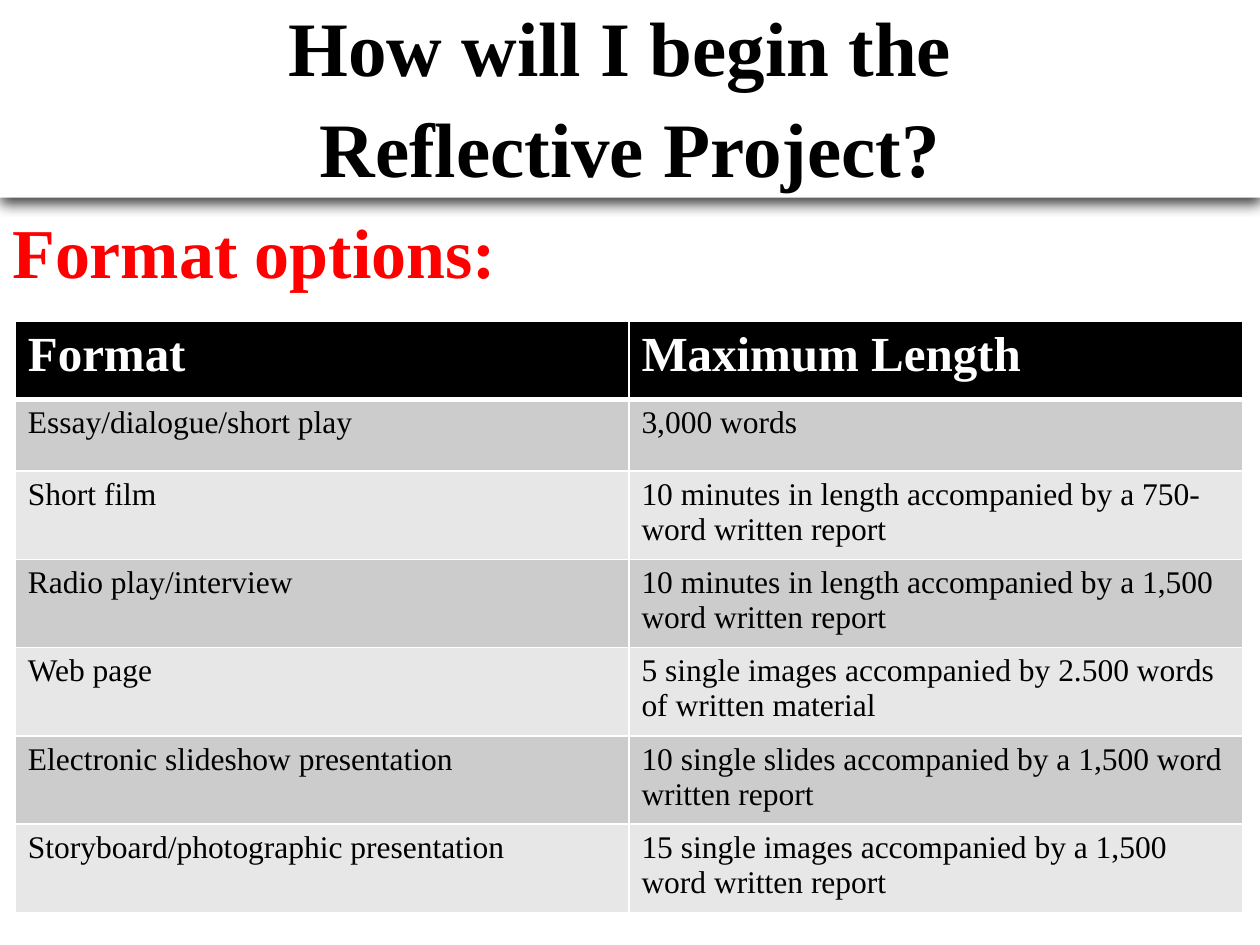
from copy import deepcopy

from lxml import etree
from pptx import Presentation
from pptx.dml.color import RGBColor
from pptx.enum.shapes import MSO_SHAPE
from pptx.enum.text import MSO_ANCHOR, PP_ALIGN
from pptx.oxml import parse_xml
from pptx.oxml.ns import nsdecls, qn
from pptx.util import Pt

RECTANGLE = MSO_SHAPE.RECTANGLE
MIDDLE, TOP = MSO_ANCHOR.MIDDLE, MSO_ANCHOR.TOP
CENTER, LEFT = PP_ALIGN.CENTER, PP_ALIGN.LEFT

# Content
TITLE = "How will I begin the \vReflective Project?"
SUBTITLE = "Format options:"
HEADER = ("Format", "Maximum Length")
FORMATS = [
    ("Essay/dialogue/short play", "3,000 words"),
    ("Short film", "10 minutes in length accompanied by a 750- word written report"),
    ("Radio play/interview", "10 minutes in length accompanied by a 1,500 word written report"),
    ("Web page", "5 single images accompanied by 2.500 words of written material"),
    ("Electronic slideshow presentation", "10 single slides accompanied by a 1,500 word written report"),
    ("Storyboard/photographic presentation", "15 single images accompanied by a 1,500 word written report"),
]

# Style
FONT = "Times New Roman"
COLORS = {
    "white": "FFFFFF",
    "black": "000000",
    "red": "FF0000",
    "dark band": "CCCCCC",
    "light band": "E7E7E7",
}
PAGE_WIDTH, PAGE_HEIGHT = 720, 540
COLUMN_WIDTH, HEADER_HEIGHT, ROW_HEIGHT = 350.6, 44.6, 41


def color(name):
    return RGBColor.from_string(COLORS[name])


def write(frame, text, size, ink="black", bold=False, align=LEFT, anchor=TOP, spacing=None):
    frame.word_wrap = True
    frame.vertical_anchor = anchor
    para = frame.paragraphs[0]
    para.text = text
    para.alignment = align
    para.line_spacing = spacing
    for span in para.runs:
        span.font.name = FONT
        span.font.size = Pt(size)
        span.font.bold = bold
        span.font.color.rgb = color(ink)
    # Line breaks take the format of the text around them
    for line_break in para._p.findall(qn("a:br")):
        line_break.append(deepcopy(para.runs[0]._r.rPr))


def add_shadow(shape, blur, distance, opacity):
    shape.shadow.inherit = False
    effects = shape._element.spPr.find(qn("a:effectLst"))
    effects.append(parse_xml(
        f'<a:outerShdw {nsdecls("a")} blurRad="{Pt(blur)}" dist="{Pt(distance)}" '
        f'dir="5400000" algn="t" rotWithShape="0"><a:srgbClr val="{COLORS["black"]}">'
        f'<a:alpha val="{opacity * 1000}"/></a:srgbClr></a:outerShdw>'))


def set_borders(cell, widths):
    properties = cell._tc.get_or_add_tcPr()
    for side, width in widths.items():
        line = etree.SubElement(properties, qn(f"a:ln{side}"), w=str(Pt(width)))
        fill = etree.SubElement(line, qn("a:solidFill"))
        etree.SubElement(fill, qn("a:srgbClr"), val=COLORS["white"])


deck = Presentation()
deck.slide_width, deck.slide_height = Pt(PAGE_WIDTH), Pt(PAGE_HEIGHT)
page = deck.slides.add_slide(deck.slide_layouts[5])

# Title on a white bar with a shadow
title = page.shapes.title
title.left, title.top, title.width, title.height = Pt(0), Pt(-8), Pt(PAGE_WIDTH), Pt(121)
write(title.text_frame, TITLE, 44, bold=True, align=CENTER, anchor=MIDDLE, spacing=1.09)

bar = page.shapes.add_shape(RECTANGLE, Pt(0), Pt(0), Pt(PAGE_WIDTH), Pt(113))
bar.fill.solid()
bar.fill.fore_color.rgb = color("white")
bar.line.fill.background()
add_shadow(bar, blur=8, distance=3, opacity=75)
title._element.addprevious(bar._element)

# Subtitle
box = page.shapes.add_textbox(Pt(0), Pt(111), Pt(PAGE_WIDTH), Pt(419))
write(box.text_frame, SUBTITLE, 40, ink="red", bold=True, spacing=1.1)

# Table of formats
rows = [HEADER, *FORMATS]
table = page.shapes.add_table(
    len(rows), len(HEADER), Pt(8.8), Pt(183.6), Pt(COLUMN_WIDTH * len(HEADER)),
    Pt(HEADER_HEIGHT + ROW_HEIGHT * len(FORMATS))).table
for column in table.columns:
    column.width = Pt(COLUMN_WIDTH)

for index, texts in enumerate(rows):
    is_header = index == 0
    table.rows[index].height = Pt(HEADER_HEIGHT if is_header else ROW_HEIGHT)
    band = "black" if is_header else ("light band", "dark band")[index % 2]
    for cell, text in zip(table.rows[index].cells, texts):
        write(cell.text_frame, text, 28 if is_header else 18,
              ink="white" if is_header else "black", bold=is_header)
        set_borders(cell, {"L": 1, "R": 1, "T": 3 if index == 1 else 1, "B": 3 if is_header else 1})
        cell.fill.solid()
        cell.fill.fore_color.rgb = color(band)

deck.save("out.pptx")
